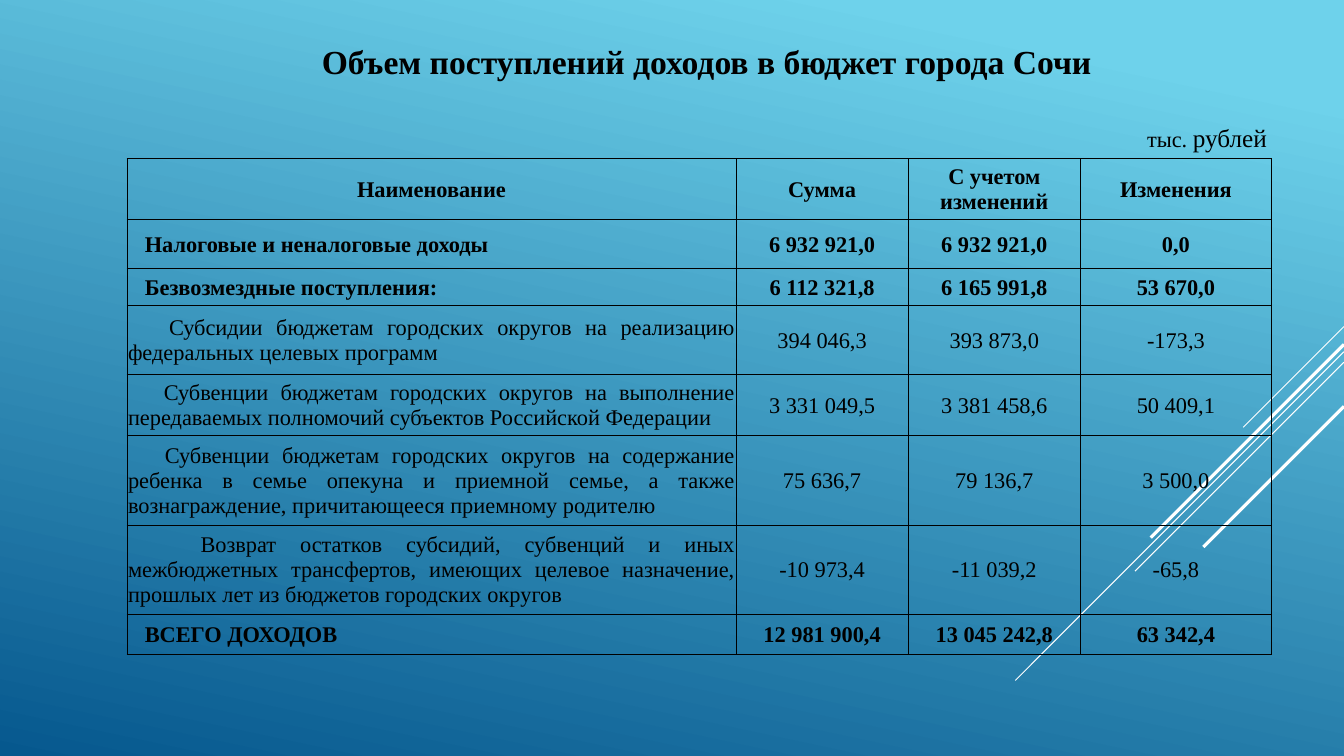
from dataclasses import dataclass

from lxml import etree
from pptx import Presentation
from pptx import util as u
from pptx.dml.color import RGBColor
from pptx.enum import shapes, text
from pptx.oxml import ns

PX = 9525  # EMU per px, 96 px to the inch
FONT = "Times New Roman"
BLACK = RGBColor(0x00, 0x00, 0x00)
WHITE = RGBColor(0xFF, 0xFF, 0xFF)
SKY = RGBColor(0x6E, 0xD2, 0xEB)
DEEP_BLUE = RGBColor(0x06, 0x58, 0x8E)
SLIDE_W, SLIDE_H = 1280, 720
COL_WIDTHS = (580, 164, 164, 182)
CENTER, JUSTIFY = text.PP_ALIGN.CENTER, text.PP_ALIGN.JUSTIFY


@dataclass(frozen=True)
class Ray:
    top: int
    run: int
    weight: float


@dataclass(frozen=True)
class Row:
    height: int
    indent: int
    bold: bool
    cells: tuple[str, str, str, str]


@dataclass(frozen=True)
class Run:
    text: str
    size: int
    bold: bool = False


RAYS = (
    Ray(311, 96, 0.75),
    Ray(335, 313, 0.75),
    Ray(345, 199, 0.75),
    Ray(328, 184, 2.25),
    Ray(387, 134, 2.25),
)

ROWS = (
    Row(58, 0, True, ("Наименование", "Сумма", "С учетом изменений", "Изменения")),
    Row(47, 16, True, ("Налоговые и неналоговые доходы",
                       "6 932 921,0", "6 932 921,0", "0,0")),
    Row(35, 16, True, ("Безвозмездные поступления:",
                       "6 112 321,8", "6 165 991,8", "53 670,0")),
    Row(66, 39, False, ("Субсидии бюджетам городских округов на реализацию "
                        "федеральных целевых программ",
                        "394 046,3", "393 873,0", "-173,3")),
    Row(58, 34, False, ("Субвенции бюджетам городских округов на выполнение "
                        "передаваемых полномочий субъектов Российской Федерации",
                        "3 331 049,5", "3 381 458,6", "50 409,1")),
    Row(85, 35, False, ("Субвенции бюджетам городских округов на содержание "
                        "ребенка в семье опекуна и приемной семье, а также "
                        "вознаграждение, причитающееся приемному родителю",
                        "75 636,7", "79 136,7", "3 500,0")),
    Row(85, 69, False, ("Возврат остатков субсидий, субвенций и иных "
                        "межбюджетных трансфертов, имеющих целевое назначение, "
                        "прошлых лет из бюджетов городских округов",
                        "-10 973,4", "-11 039,2", "-65,8")),
    Row(38, 16, True, ("ВСЕГО ДОХОДОВ",
                       "12 981 900,4", "13 045 242,8", "63 342,4")),
)


def px(n: int) -> u.Emu:
    return u.Emu(n * PX)


def add_run(p, run: Run) -> None:
    r = p.add_run()
    r.text = run.text
    r.font.name = FONT
    r.font.size = u.Pt(run.size)
    r.font.bold = run.bold
    r.font.color.rgb = BLACK


def paint_background(s) -> None:
    fill = s.background.fill
    fill.gradient()
    fill.gradient_angle = 258
    for stop, color, position in zip(fill.gradient_stops, (SKY, DEEP_BLUE), (0.1, 1)):
        stop.color.rgb = color
        stop.position = position


def add_ray(s, ray: Ray) -> None:
    """Draw a 45-degree line from the right slide edge down to the left."""
    line = s.shapes.add_connector(
        shapes.MSO_CONNECTOR.STRAIGHT, px(SLIDE_W), px(ray.top),
        px(SLIDE_W - ray.run), px(ray.top + ray.run))
    line.line.color.rgb = WHITE
    line.line.width = u.Pt(ray.weight)
    etree.SubElement(line._element.spPr, ns.qn("a:effectLst"))


def add_text(s, left: int, top: int, width: int, height: int,
             runs: tuple[Run, ...], align=text.PP_ALIGN.LEFT) -> None:
    tf = s.shapes.add_textbox(px(left), px(top), px(width), px(height)).text_frame
    tf.word_wrap = True
    tf.auto_size = text.MSO_AUTO_SIZE.SHAPE_TO_FIT_TEXT
    p = tf.paragraphs[0]
    p.alignment = align
    for run in runs:
        add_run(p, run)


def add_borders(cell) -> None:
    tc_pr = cell._tc.get_or_add_tcPr()
    for side in ("lnL", "lnR", "lnT", "lnB"):
        ln = etree.SubElement(tc_pr, ns.qn(f"a:{side}"), w=str(u.Pt(0.5)))
        fill = etree.SubElement(ln, ns.qn("a:solidFill"))
        etree.SubElement(fill, ns.qn("a:srgbClr"), val=str(BLACK))


def fill_cell(cell, run: Run, align, indent: int) -> None:
    add_borders(cell)
    cell.fill.background()
    cell.margin_left = cell.margin_right = cell.margin_top = px(1)
    cell.margin_bottom = 0
    cell.vertical_anchor = text.MSO_ANCHOR.MIDDLE
    p = cell.text_frame.paragraphs[0]
    p.alignment = align
    if indent:
        p_pr = p._p.get_or_add_pPr()
        p_pr.set("marL", "0")
        p_pr.set("indent", str(px(indent)))
    add_run(p, run)


def add_income_table(s, left: int, top: int) -> None:
    height = sum(row.height for row in ROWS)
    table = s.shapes.add_table(len(ROWS), len(COL_WIDTHS), px(left), px(top),
                               px(sum(COL_WIDTHS)), px(height)).table
    table.first_row = table.horz_banding = False
    for column, width in zip(table.columns, COL_WIDTHS):
        column.width = px(width)
    for i, row in enumerate(ROWS):
        table.rows[i].height = px(row.height)
        for j, value in enumerate(row.cells):
            is_name = i > 0 and j == 0
            fill_cell(table.cell(i, j), Run(value, 16, row.bold),
                      JUSTIFY if is_name else CENTER, row.indent if is_name else 0)


def main() -> None:
    prs = Presentation()
    prs.slide_width, prs.slide_height = px(SLIDE_W), px(SLIDE_H)
    s = prs.slides.add_slide(prs.slide_layouts[6])
    paint_background(s)
    for ray in RAYS:
        add_ray(s, ray)
    add_text(s, 1083, 112, 145, 38, (Run("тыс. ", 16), Run("рублей", 18)))
    add_income_table(s, 121, 151)
    add_text(s, 135, 34, 1076, 48,
             (Run("Объем поступлений доходов в бюджет города Сочи", 24, True),), CENTER)
    prs.save("out.pptx")


if __name__ == "__main__":
    main()
